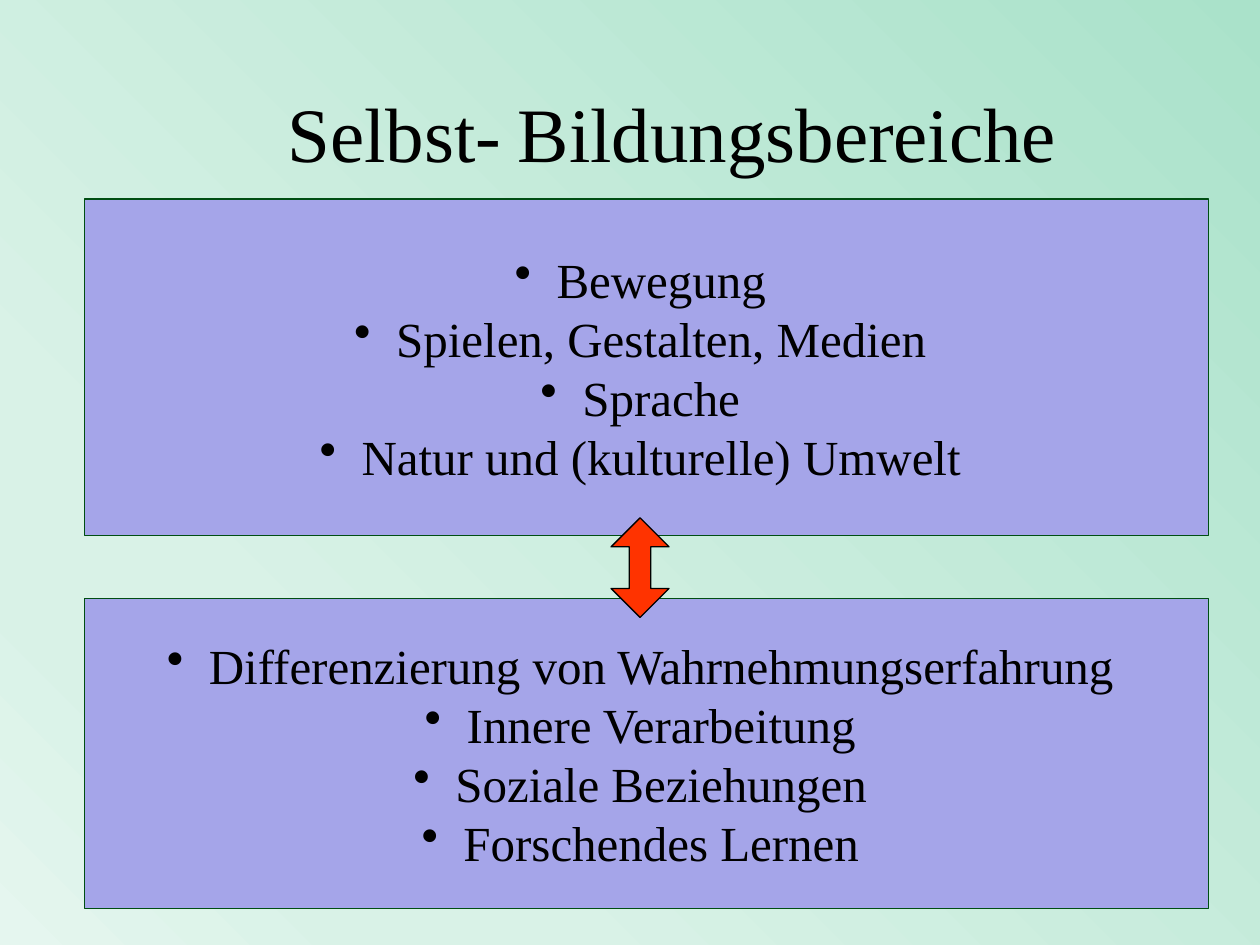
from lxml import etree
from pptx import Presentation
from pptx.dml.color import RGBColor
from pptx.enum import shapes, text
from pptx.oxml import ns
from pptx.util import Inches, Pt

COLORS = {"text": "000000", "panel": "A5A5E9", "border": "004E13", "arrow": "FF3300"}
BACKGROUND_STOPS = [(0, "AAE2CA"), (74, "D9F2E7"), (83, "D9F2E7"), (100, "E5F6EF")]
FONT = "Times New Roman"


def color(name):
    return RGBColor.from_string(COLORS[name])


def paint_background(slide):
    fill = slide.background.fill
    fill.gradient()
    fill.gradient_angle = 225
    stops = next(slide.element.iter(ns.qn("a:gsLst")))
    for stop in list(stops):
        stops.remove(stop)
    for percent, value in BACKGROUND_STOPS:
        stop = etree.SubElement(stops, ns.qn("a:gs"), pos=str(percent * 1000))
        etree.SubElement(stop, ns.qn("a:srgbClr"), val=value)


def style_paragraph(paragraph, size):
    paragraph.alignment = text.PP_ALIGN.CENTER
    paragraph.font.name = FONT
    paragraph.font.size = Pt(size)
    paragraph.font.color.rgb = color("text")


def add_title(slide, left, top, width, height, words):
    box = slide.shapes.add_textbox(left, top, width, height)
    frame = box.text_frame
    frame.word_wrap = True
    frame.vertical_anchor = text.MSO_ANCHOR.MIDDLE
    frame.text = words
    style_paragraph(frame.paragraphs[0], 44)


def add_filled_shape(slide, kind, box, fill, line):
    shape = slide.shapes.add_shape(kind, *box)
    shape.shadow.inherit = False
    shape.fill.solid()
    shape.fill.fore_color.rgb = color(fill)
    shape.line.color.rgb = color(line)
    shape.line.width = Pt(0.75)
    return shape


def add_panel(slide, left, top, width, height, items):
    panel = add_filled_shape(slide, shapes.MSO_SHAPE.RECTANGLE,
                             (left, top, width, height), "panel", "border")
    frame = panel.text_frame
    frame.word_wrap = False
    frame.vertical_anchor = text.MSO_ANCHOR.MIDDLE
    frame.text = "\n".join(" " + item for item in items)
    for paragraph in frame.paragraphs:
        style_paragraph(paragraph, 28)
        properties = paragraph._p.get_or_add_pPr()
        bullet = etree.Element(ns.qn("a:buChar"), char="•")
        properties.insert_element_before(bullet, "a:tabLst", "a:defRPr", "a:extLst")


def add_double_arrow(slide, left, top, width, height):
    arrow = add_filled_shape(slide, shapes.MSO_SHAPE.UP_DOWN_ARROW,
                             (left, top, width, height), "arrow", "text")
    arrow.adjustments[0] = 0.388
    arrow.adjustments[1] = 0.373


def main():
    presentation = Presentation()
    presentation.slide_width = Inches(10)
    presentation.slide_height = Inches(7.5)
    slide = presentation.slides.add_slide(presentation.slide_layouts[6])
    paint_background(slide)
    add_title(slide, Inches(2), Inches(0.42), Inches(8.5), Inches(1.25), "Bildungsbereiche")
    add_title(slide, Inches(1.17), Inches(0.42), Inches(3.92), Inches(1.25), "Selbst-")
    add_panel(slide, Inches(0.67), Inches(1.58), Inches(8.92), Inches(2.67),
              ["Bewegung", "Spielen, Gestalten, Medien", "Sprache",
               "Natur und (kulturelle) Umwelt"])
    add_panel(slide, Inches(0.67), Inches(4.75), Inches(8.92), Inches(2.46),
              ["Differenzierung von Wahrnehmungserfahrung", "Innere Verarbeitung",
               "Soziale Beziehungen", "Forschendes Lernen"])
    add_double_arrow(slide, Inches(4.85), Inches(4.11), Inches(0.46), Inches(0.79))
    presentation.save("out.pptx")


if __name__ == "__main__":
    main()
